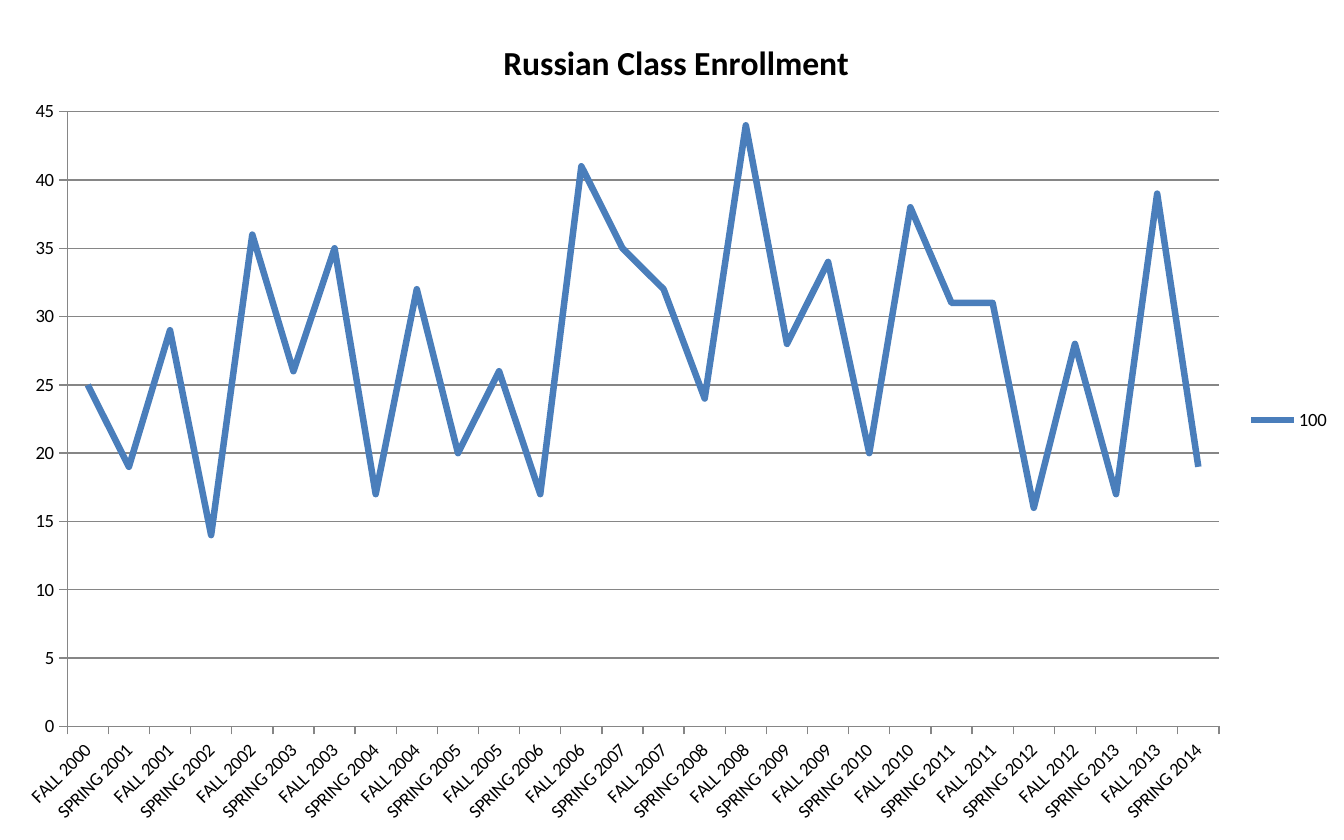
from dataclasses import dataclass

from lxml.etree import SubElement
from pptx import Presentation
from pptx.chart.data import CategoryChartData as ChartData
from pptx.dml.color import RGBColor as Color
from pptx.enum.chart import XL_CHART_TYPE as ChartKind
from pptx.enum.chart import XL_LEGEND_POSITION as LegendSpot
from pptx.enum.chart import XL_MARKER_STYLE as Marker
from pptx.enum.chart import XL_TICK_MARK as Tick
from pptx.oxml.ns import qn
from pptx.util import Inches, Pt

ENROLLMENT = [25, 19, 29, 14, 36, 26, 35, 17, 32, 20, 26, 17, 41, 35,
              32, 24, 44, 28, 34, 20, 38, 31, 31, 16, 28, 17, 39, 19]
TERMS = [f"{term} {year + shift}" for year in range(2000, 2014)
         for term, shift in (("FALL", 0), ("SPRING", 1))]


def paint(target, value):
    target.rgb = Color.from_string(value)


def place(parent, before, **fractions):
    for old in parent.findall(qn("c:layout")):
        parent.remove(old)
    layout = SubElement(parent, qn("c:layout"))
    manual = SubElement(layout, qn("c:manualLayout"))
    if "w" in fractions:
        SubElement(manual, qn("c:layoutTarget")).set("val", "inner")
    for side in "xy":
        SubElement(manual, qn(f"c:{side}Mode")).set("val", "edge")
    for name, value in fractions.items():
        SubElement(manual, qn(f"c:{name}")).set("val", str(value))
    anchor = parent.find(qn(before)) if before else None
    if anchor is not None:
        anchor.addnext(layout)
    else:
        parent.insert(0, layout)


@dataclass
class EnrollmentSlide:
    """Holds the chart style and the current slide."""
    page: object
    font: str = "Calibri"
    ink: str = "000000"
    grid: str = "868686"
    accent: str = "4A7EBB"

    def style_font(self, font, size, bold=False):
        font.name, font.size, font.bold = self.font, Pt(size), bold
        paint(font.color, self.ink)

    def style_line(self, line, value, width):
        paint(line.color, value)
        line.width = Pt(width)

    def title(self, chart, text):
        chart.has_title = True
        span = chart.chart_title.text_frame.paragraphs[0].add_run()
        span.text = text
        self.style_font(span.font, 18, True)
        chart.chart_title.include_in_layout = False
        place(chart.chart_title._element, "c:tx", x=0.37, y=0.04)

    def axis(self, axis):
        axis.major_tick_mark, axis.minor_tick_mark = Tick.OUTSIDE, Tick.NONE
        self.style_line(axis.format.line, self.grid, 0.75)
        self.style_font(axis.tick_labels.font, 10)

    def axes(self, chart, top, step):
        terms, counts = chart.category_axis, chart.value_axis
        for axis in (terms, counts):
            self.axis(axis)
        body = terms._element.find(qn("c:txPr")).find(qn("a:bodyPr"))
        body.set("rot", "-2700000")
        body.set("vert", "horz")
        counts.minimum_scale, counts.maximum_scale = 0, top
        counts.major_unit = step
        counts.has_major_gridlines = True
        self.style_line(counts.major_gridlines.format.line, self.grid, 0.75)

    def legend(self, chart):
        chart.has_legend = True
        chart.legend.position = LegendSpot.RIGHT
        chart.legend.include_in_layout = False
        self.style_font(chart.legend.font, 10)

    def line_chart(self, title, name, labels, values, width, height):
        data = ChartData()
        data.categories = labels
        data.add_series(name, values)
        frame = self.page.shapes.add_chart(
            ChartKind.LINE, 0, 0, Inches(width), Inches(height), data)
        chart = frame.chart
        self.style_font(chart.font, 10)
        self.title(chart, title)
        self.axes(chart, 45, 5)
        self.legend(chart)
        plot = chart.plots[0]
        plot.vary_by_categories = False
        series = plot.series[0]
        series.smooth = False
        series.marker.style = Marker.NONE
        self.style_line(series.format.line, self.accent, 3.5)
        area = chart._chartSpace.find(qn("c:chart")).find(qn("c:plotArea"))
        place(area, None, x=0.05, y=0.133, w=0.857, h=0.732)


def main():
    width, height = 10, 6.25
    deck = Presentation()
    deck.slide_width, deck.slide_height = Inches(width), Inches(height)
    slide = EnrollmentSlide(deck.slides.add_slide(deck.slide_layouts[6]))
    slide.line_chart("Russian Class Enrollment", "100", TERMS, ENROLLMENT,
                     width, height)
    deck.save("out.pptx")


if __name__ == "__main__":
    main()
